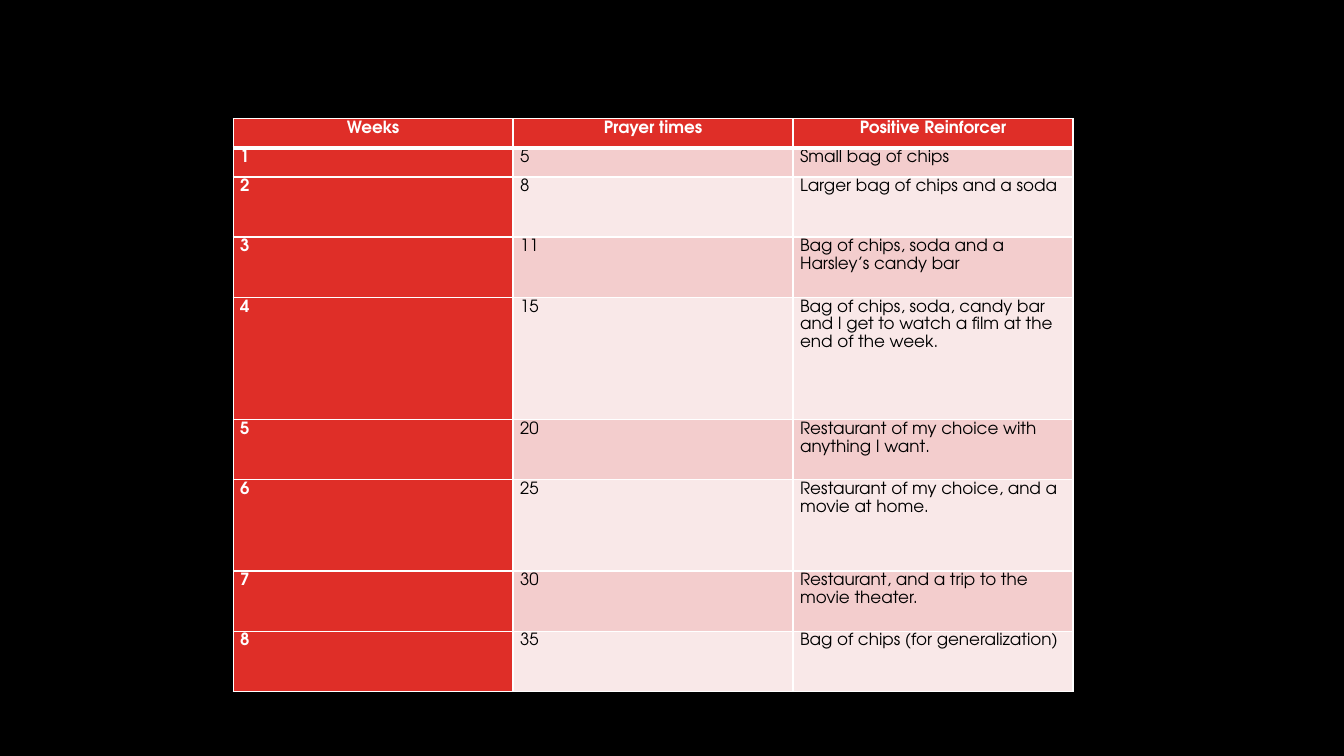
from dataclasses import dataclass

from lxml.etree import SubElement
from pptx import Presentation
from pptx.dml.color import RGBColor
from pptx.enum.text import PP_ALIGN
from pptx.oxml.ns import qn
from pptx.util import Pt


@dataclass(frozen=True)
class Theme:
    back: str = "000000"
    red: str = "DF2E28"
    dark: str = "F3CDCD"
    light: str = "F9E8E8"
    white: str = "FFFFFF"
    ink: str = "000000"
    font: str = "TeX Gyre Adventor"
    size: float = 12
    lead: float = 1.15
    thin: float = 1
    thick: float = 3


class Deck:
    def __init__(self, theme, width, height):
        self.theme = theme
        self.prs = Presentation()
        self.prs.slide_width, self.prs.slide_height = Pt(width), Pt(height)
        self.slide = None

    def page(self):
        self.slide = self.prs.slides.add_slide(self.prs.slide_layouts[6])
        fill = self.slide.background.fill
        fill.solid()
        fill.fore_color.rgb = RGBColor.from_string(self.theme.back)

    def edge(self, cell, side, width):
        props = cell._tc.get_or_add_tcPr()
        line = SubElement(props, qn(f"a:ln{side}"), w=str(Pt(width)))
        fill = SubElement(line, qn("a:solidFill"))
        SubElement(fill, qn("a:srgbClr"), val=self.theme.white)

    def cell(self, cell, text, fill, strong, align, top, bottom):
        look = self.theme
        cell.margin_left = cell.margin_right = Pt(5)
        cell.margin_top = cell.margin_bottom = 0
        # Borders come before the fill in the cell properties
        for side, width in zip("LRTB", (look.thin, look.thin, top, bottom)):
            self.edge(cell, side, width)
        cell.fill.solid()
        cell.fill.fore_color.rgb = RGBColor.from_string(fill)
        cell.text_frame.text = text
        para = cell.text_frame.paragraphs[0]
        para.alignment = align
        para.line_spacing = look.lead
        font = para.runs[0].font
        font.name, font.size, font.bold = look.font, Pt(look.size), strong
        color = look.white if strong else look.ink
        font.color.rgb = RGBColor.from_string(color)

    def table(self, left, top, width, rows, highs):
        look = self.theme
        count = len(rows[0])
        frame = self.slide.shapes.add_table(
            len(rows), count, Pt(left), Pt(top), Pt(width), Pt(sum(highs)))
        table = frame.table
        table.first_row = table.horz_banding = False
        for col in table.columns:
            col.width = Pt(width / count)
        for r, (row, high) in enumerate(zip(rows, highs)):
            table.rows[r].height = Pt(high)
            for c, text in enumerate(row):
                strong = r == 0 or c == 0
                band = look.dark if r % 2 else look.light
                self.cell(
                    table.cell(r, c), text,
                    fill=look.red if strong else band,
                    strong=strong,
                    align=PP_ALIGN.CENTER if r == 0 else PP_ALIGN.LEFT,
                    top=look.thick if r == 1 else look.thin,
                    bottom=look.thick if r == 0 else look.thin)

    def save(self):
        self.prs.save("out.pptx")


# Prayer times and reward for each week
HEAD = ("Weeks", "Prayer times", "Positive Reinforcer")
PLAN = [
    ("5", "Small bag of chips"),
    ("8", "Larger bag of chips and a soda"),
    ("11", "Bag of chips, soda and a Harsley’s candy bar"),
    ("15", "Bag of chips, soda, candy bar and I get to watch a film "
           "at the end of the week."),
    ("20", "Restaurant of my choice with anything I want."),
    ("25", "Restaurant of my choice, and a movie at home."),
    ("30", "Restaurant, and a trip to the movie theater."),
    ("35", "Bag of chips (for generalization)"),
]

# Row heights by the room each row needs
LOW, MID, TALL, FULL = 20.8, 43, 65.2, 87.4
HIGHS = [LOW, LOW, MID, MID, FULL, MID, TALL, MID, MID]


def main():
    deck = Deck(Theme(), 960, 540)
    deck.page()
    # Reward table
    weeks = [(str(n), *row) for n, row in enumerate(PLAN, 1)]
    deck.table(166.5, 84.8, 600, [HEAD, *weeks], HIGHS)
    deck.save()


if __name__ == "__main__":
    main()
